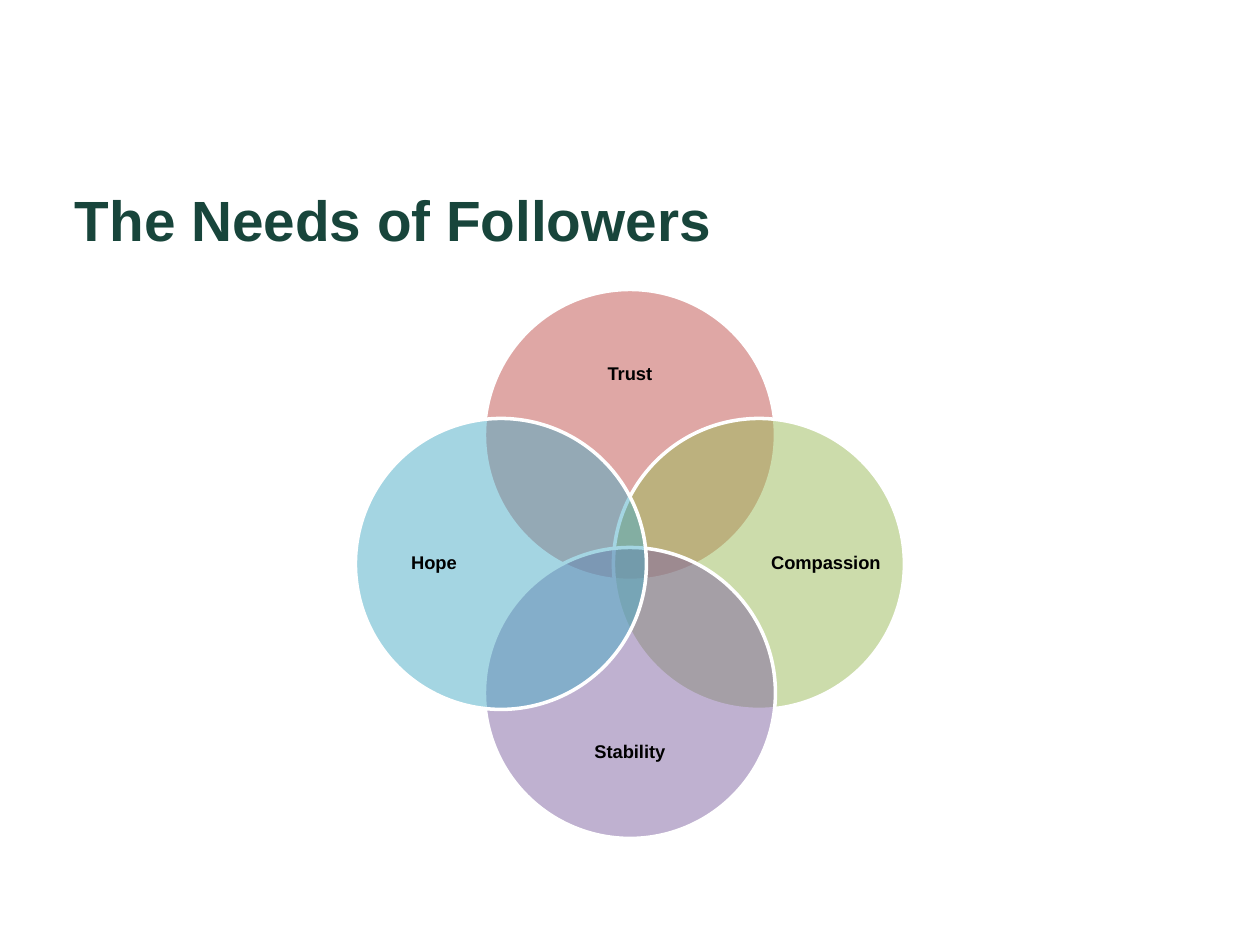
from pptx import Presentation
from pptx.dml.color import RGBColor
from pptx.enum.shapes import MSO_SHAPE as SHAPE
from pptx.enum.text import MSO_ANCHOR as ANCHOR, PP_ALIGN as ALIGN
from pptx.oxml.ns import qn
from pptx.util import Pt
from lxml import etree

PX = 914400 / 126
THEME = {
    "font": "Arial",
    "title": "18453B", "title_size": 32.4,
    "label": "000000", "label_size": 10.5,
    "line": "FFFFFF",
    "trust": "C0504D", "compassion": "9BBB59",
    "stability": "8064A2", "hope": "4BACC6",
}


def px(*values):
    return [round(v * PX) for v in values]


def add_text(shapes, box, text, style, insets, anchor, align):
    tb = shapes.add_textbox(*px(*box))
    tf = tb.text_frame
    tf.word_wrap = True
    tf.margin_left, tf.margin_top, tf.margin_right, tf.margin_bottom = px(*insets)
    tf.vertical_anchor = anchor
    p = tf.paragraphs[0]
    p.text = text
    p.alignment = align
    f = p.runs[0].font
    f.name = THEME["font"]
    f.size = Pt(THEME[style + "_size"])
    f.bold = True
    f.color.rgb = RGBColor.from_string(THEME[style])
    return p


prs = Presentation()
prs.slide_width, prs.slide_height = px(1260, 945)
s = prs.slides.add_slide(prs.slide_layouts[6])

add_text(s.shapes, (63, 173, 1134, 67), "The Needs of Followers", "title",
         (12, 12, 12, 0), ANCHOR.TOP, ALIGN.LEFT)

CX, CY = 630, 564
DIAMETER = 291
CIRCLE_SHIFT = 129
TALL, WIDE = (112, 224), (224, 92)
needs = [
    ("Trust", 0, -1, 189, WIDE),
    ("Compassion", 1, 0, 196, TALL),
    ("Stability", 0, 1, 189, WIDE),
    ("Hope", -1, 0, 196, TALL),
]

venn = s.shapes.add_group_shape()
for name, dx, dy, label_shift, (w, h) in needs:
    x = CX + dx * CIRCLE_SHIFT - DIAMETER / 2
    y = CY + dy * CIRCLE_SHIFT - DIAMETER / 2
    sp = venn.shapes.add_shape(SHAPE.OVAL, *px(x, y, DIAMETER, DIAMETER))
    sp.shadow.inherit = False
    sp.fill.solid()
    sp.fill.fore_color.rgb = RGBColor.from_string(THEME[name.lower()])
    color = sp._element.spPr.find(qn("a:solidFill")).find(qn("a:srgbClr"))
    etree.SubElement(color, qn("a:alpha")).set("val", "50000")
    sp.line.color.rgb = RGBColor.from_string(THEME["line"])
    sp.line.width = Pt(2)

    box = (CX + dx * label_shift - w / 2, CY + dy * label_shift - h / 2, w, h)
    p = add_text(venn.shapes, box, name, "label", (0, 0, 0, 0),
                 ANCHOR.MIDDLE, ALIGN.CENTER)
    p.line_spacing = 0.9

prs.save("out.pptx")
